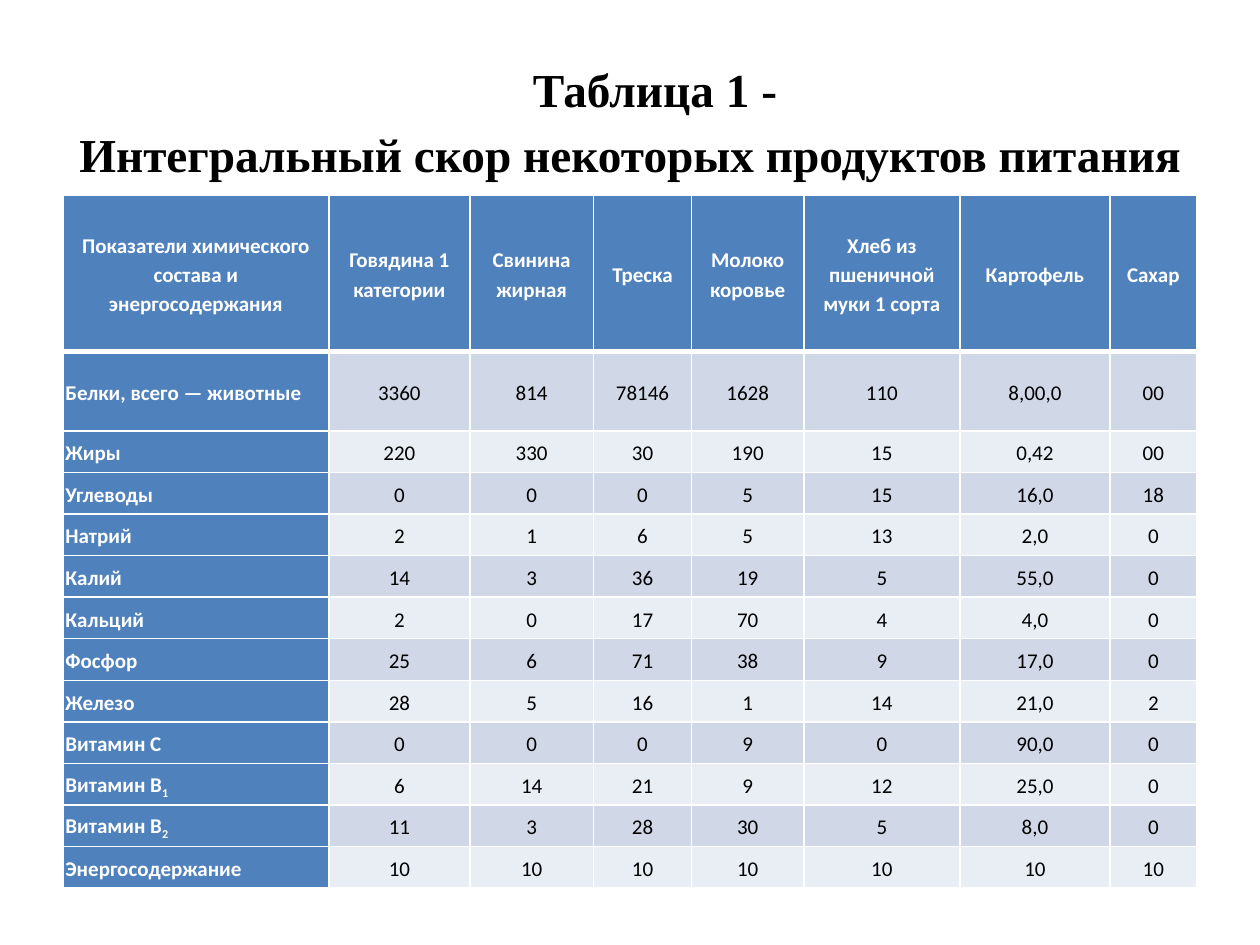
from dataclasses import dataclass
from typing import NamedTuple

from lxml import etree
from pptx import Presentation
from pptx import util as u
from pptx.dml.color import RGBColor
from pptx.enum import text
from pptx.oxml.ns import qn


@dataclass(frozen=True)
class Theme:
    title_font: str = "Times New Roman"
    table_font: str = "Calibri"
    title_size: float = 27
    table_size: float = 12
    line_spacing: float = 1.15
    ink: str = "000000"
    paper: str = "FFFFFF"
    heading: str = "4F81BD"
    bands: tuple[str, str] = ("D0D8E8", "E9EDF4")
    thin_rule: float = 1
    thick_rule: float = 3


class Column(NamedTuple):
    heading: str
    width: float


class Nutrient(NamedTuple):
    name: str
    scores: str
    subscript: str = ""
    height: float = 0.33


class Look(NamedTuple):
    fill: str
    color: str
    bold: bool
    align: text.PP_ALIGN


THEME = Theme()
SLIDE_W, SLIDE_H = 10, 7.5
MARGIN = 0.05 * SLIDE_W
TITLE_TOP, TITLE_H = 0.04 * SLIDE_H, 1.25
HEADER_H = 1.24
CELL_INSET = 0.02
FIRST_LINE_INDENT = 0.49

TITLE = "Таблица 1 - \vИнтегральный скор некоторых продуктов питания"
COLUMNS = [
    Column("Показатели химического состава и энергосодержания", 2.11),
    Column("Говядина 1 категории", 1.12),
    Column("Свинина жирная", 0.98),
    Column("Треска", 0.78),
    Column("Молоко коровье", 0.89),
    Column("Хлеб из пшеничной муки 1 сорта", 1.24),
    Column("Картофель", 1.19),
    Column("Сахар", 0.69),
]
NUTRIENTS = [
    Nutrient("Белки, всего — животные", "3360 814 78146 1628 110 8,00,0 00", height=0.63),
    Nutrient("Жиры", "220 330 30 190 15 0,42 00"),
    Nutrient("Углеводы", "0 0 0 5 15 16,0 18"),
    Nutrient("Натрий", "2 1 6 5 13 2,0 0"),
    Nutrient("Калий", "14 3 36 19 5 55,0 0"),
    Nutrient("Кальций", "2 0 17 70 4 4,0 0"),
    Nutrient("Фосфор", "25 6 71 38 9 17,0 0"),
    Nutrient("Железо", "28 5 16 1 14 21,0 2"),
    Nutrient("Витамин С", "0 0 0 9 0 90,0 0"),
    Nutrient("Витамин B", "6 14 21 9 12 25,0 0", subscript="1"),
    Nutrient("Витамин В", "11 3 28 30 5 8,0 0", subscript="2"),
    Nutrient("Энергосодержание", "10 10 10 10 10 10 10"),
]

HEADER_LOOK = Look(THEME.heading, THEME.paper, True, text.PP_ALIGN.CENTER)
NAME_LOOK = HEADER_LOOK._replace(align=text.PP_ALIGN.LEFT)
SCORE_LOOKS = [Look(band, THEME.ink, False, text.PP_ALIGN.CENTER) for band in THEME.bands]


def apply_format(target, values: dict) -> None:
    for attribute, value in values.items():
        setattr(target, attribute, value)


def format_font(font, name: str, size: float, bold: bool, color: str) -> None:
    apply_format(font, {"name": name, "size": u.Pt(size), "bold": bold})
    font.color.rgb = RGBColor.from_string(color)


def add_title(slide) -> None:
    box = slide.shapes.add_textbox(
        *map(u.Inches, (MARGIN, TITLE_TOP, SLIDE_W - 2 * MARGIN, TITLE_H)))
    frame = box.text_frame
    apply_format(frame, {"word_wrap": True, "vertical_anchor": text.MSO_ANCHOR.MIDDLE})
    heading = frame.paragraphs[0]
    heading.text = TITLE
    apply_format(heading, {"alignment": text.PP_ALIGN.CENTER,
                           "line_spacing": THEME.line_spacing})
    heading._p.get_or_add_pPr().set("indent", str(u.Inches(FIRST_LINE_INDENT)))
    for run in heading.runs:
        format_font(run.font, THEME.title_font, THEME.title_size, True, THEME.ink)


def draw_borders(cell, top: float, bottom: float) -> None:
    """Rule all four sides; call before filling, as borders precede fill in tcPr."""
    sides = {"L": THEME.thin_rule, "R": THEME.thin_rule, "T": top, "B": bottom}
    properties = cell._tc.get_or_add_tcPr()
    for side, width in sides.items():
        line = etree.SubElement(properties, qn(f"a:ln{side}"), w=str(u.Pt(width)))
        fill = etree.SubElement(line, qn("a:solidFill"))
        etree.SubElement(fill, qn("a:srgbClr"), val=THEME.paper)


def fill_cell(cell, content: str, look: Look, row: int, subscript: str = "") -> None:
    draw_borders(cell,
                 top=THEME.thick_rule if row == 1 else THEME.thin_rule,
                 bottom=THEME.thick_rule if row == 0 else THEME.thin_rule)
    cell.fill.solid()
    cell.fill.fore_color.rgb = RGBColor.from_string(look.fill)
    inset = u.Inches(CELL_INSET)
    apply_format(cell, {"margin_left": inset, "margin_right": inset,
                        "margin_top": inset, "margin_bottom": inset,
                        "vertical_anchor": text.MSO_ANCHOR.MIDDLE})
    paragraph = cell.text_frame.paragraphs[0]
    apply_format(paragraph, {"alignment": look.align, "line_spacing": THEME.line_spacing})
    for part in filter(None, (content, subscript)):
        run = paragraph.add_run()
        run.text = part
        format_font(run.font, THEME.table_font, THEME.table_size, look.bold, look.color)
    if subscript:
        run._r.get_or_add_rPr().set("baseline", "-25000")


def add_score_table(slide) -> None:
    heights = [HEADER_H, *(nutrient.height for nutrient in NUTRIENTS)]
    table = slide.shapes.add_table(
        len(heights), len(COLUMNS),
        *map(u.Inches, (MARGIN, TITLE_TOP + TITLE_H,
                        sum(column.width for column in COLUMNS), sum(heights)))).table
    for grid_row, height in zip(table.rows, heights):
        grid_row.height = u.Inches(height)
    for index, column in enumerate(COLUMNS):
        table.columns[index].width = u.Inches(column.width)
        fill_cell(table.cell(0, index), column.heading, HEADER_LOOK, 0)
    for row, nutrient in enumerate(NUTRIENTS, start=1):
        fill_cell(table.cell(row, 0), nutrient.name, NAME_LOOK, row, nutrient.subscript)
        score_look = SCORE_LOOKS[(row - 1) % len(SCORE_LOOKS)]
        for index, score in enumerate(nutrient.scores.split(), start=1):
            fill_cell(table.cell(row, index), score, score_look, row)


def main() -> None:
    deck = Presentation()
    apply_format(deck, {"slide_width": u.Inches(SLIDE_W), "slide_height": u.Inches(SLIDE_H)})
    slide = deck.slides.add_slide(deck.slide_layouts[6])
    add_title(slide)
    add_score_table(slide)
    deck.save("out.pptx")


if __name__ == "__main__":
    main()
